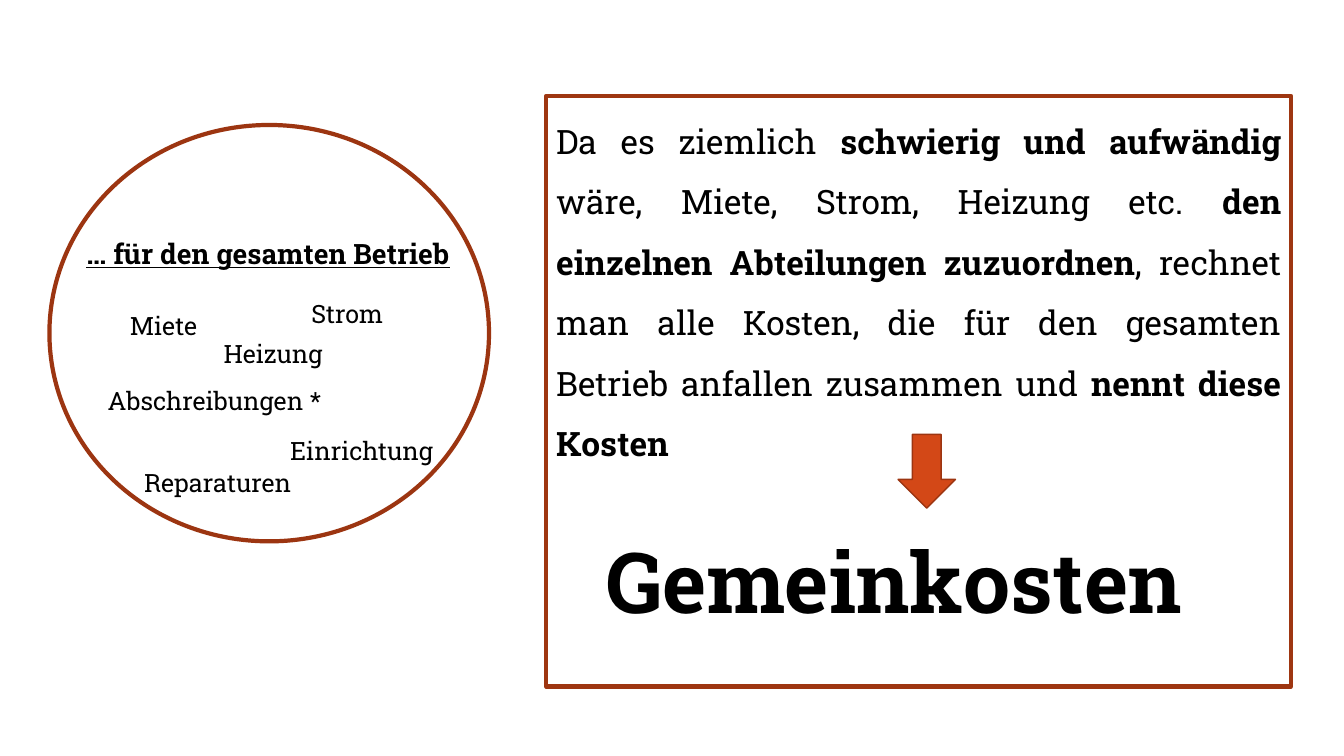
"""Build the slide that explains overhead costs (Gemeinkosten)."""
from dataclasses import dataclass

from pptx import Presentation
from pptx.dml.color import RGBColor
from pptx.enum.shapes import MSO_SHAPE
from pptx.enum.text import MSO_ANCHOR, PP_ALIGN
from pptx.shapes.autoshape import Shape
from pptx.slide import Slide
from pptx.text.text import _Paragraph
from pptx.util import Pt

OVAL = MSO_SHAPE.OVAL
RECTANGLE = MSO_SHAPE.RECTANGLE
DOWN_ARROW = MSO_SHAPE.DOWN_ARROW
TOP = MSO_ANCHOR.TOP
JUSTIFY = PP_ALIGN.JUSTIFY
FONT = "Roboto Slab"
BLACK = "000000"
RUST = "9C3511"
ORANGE = "D34817"


@dataclass(frozen=True)
class Box:
    left: float
    top: float
    width: float
    height: float


@dataclass(frozen=True)
class Label:
    text: str
    box: Box
    size: float = 18
    bold: bool = False
    underline: bool = False


@dataclass(frozen=True)
class Figure:
    kind: MSO_SHAPE
    box: Box
    line_color: str
    line_width: float
    fill: str | None = None


LABELS = [
    Label("Miete", Box(85.7, 218.2, 77, 29)),
    Label("Strom", Box(215.3, 209.5, 77, 29)),
    Label("Heizung", Box(152.6, 238.3, 100, 29)),
    Label("Reparaturen", Box(95.8, 330.5, 134.6, 29)),
    Label("Einrichtung", Box(200.2, 307.4, 131, 29)),
    Label("Abschreibungen *", Box(69.8, 271.4, 185.8, 29)),
    Label("… für den gesamten Betrieb", Box(54.7, 165.6, 296, 31.5), 20, True, True),
    Label("Gemeinkosten", Box(426.2, 374.4, 446.4, 80), 60, True),
]
BUSINESS_CIRCLE = Figure(OVAL, Box(35.3, 89.3, 314, 297.4), RUST, 3)
EXPLANATION_FRAME = Figure(RECTANGLE, Box(390.2, 68.4, 532, 422), "9E3611", 3)
RESULT_ARROW = Figure(DOWN_ARROW, Box(641.5, 310.3, 41, 52.6), RUST, 1, ORANGE)
EXPLANATION = [
    ("Da es ziemlich ", False),
    ("schwierig und aufwändig", True),
    (" wäre, Miete, Strom, Heizung etc. ", False),
    ("den einzelnen Abteilungen zuzuordnen", True),
    (", rechnet man alle Kosten, die für den gesamten Betrieb anfallen zusammen und ", False),
    ("nennt diese Kosten", True),
]


def color(value: str) -> RGBColor:
    """Turn a hex string into a colour."""
    return RGBColor.from_string(value)


def place(box: Box) -> tuple[Pt, Pt, Pt, Pt]:
    """Give the lengths of a box in points."""
    return Pt(box.left), Pt(box.top), Pt(box.width), Pt(box.height)


def add_run(paragraph: _Paragraph, text: str, size: float, bold: bool, underline: bool = False) -> None:
    """Append one formatted run to a paragraph."""
    run = paragraph.add_run()
    run.text = text
    run.font.name = FONT
    run.font.size = Pt(size)
    run.font.bold = bold
    run.font.underline = underline
    run.font.color.rgb = color(BLACK)


def add_label(slide: Slide, label: Label) -> None:
    """Place a single line of text."""
    frame = slide.shapes.add_textbox(*place(label.box)).text_frame
    frame.word_wrap = True
    add_run(frame.paragraphs[0], label.text, label.size, label.bold, label.underline)


def add_figure(slide: Slide, figure: Figure) -> Shape:
    """Draw an outlined shape, filled if it has a fill colour."""
    shape = slide.shapes.add_shape(figure.kind, *place(figure.box))
    shape.shadow.inherit = False
    shape.line.color.rgb = color(figure.line_color)
    shape.line.width = Pt(figure.line_width)
    if figure.fill:
        shape.fill.solid()
        shape.fill.fore_color.rgb = color(figure.fill)
    else:
        shape.fill.background()
    return shape


def add_explanation(slide: Slide) -> None:
    """Draw the frame with the justified explanation."""
    frame = add_figure(slide, EXPLANATION_FRAME).text_frame
    frame.word_wrap = True
    frame.vertical_anchor = TOP
    paragraph = frame.paragraphs[0]
    paragraph.alignment = JUSTIFY
    paragraph.line_spacing = 1.5
    for text, bold in EXPLANATION:
        add_run(paragraph, text, 24, bold)


def main() -> None:
    """Build and save the presentation."""
    deck = Presentation()
    deck.slide_width, deck.slide_height = Pt(960), Pt(540)
    slide = deck.slides.add_slide(deck.slide_layouts[6])
    add_figure(slide, BUSINESS_CIRCLE)
    add_explanation(slide)
    add_figure(slide, RESULT_ARROW)
    for label in LABELS:
        add_label(slide, label)
    deck.save("out.pptx")


if __name__ == "__main__":
    main()
